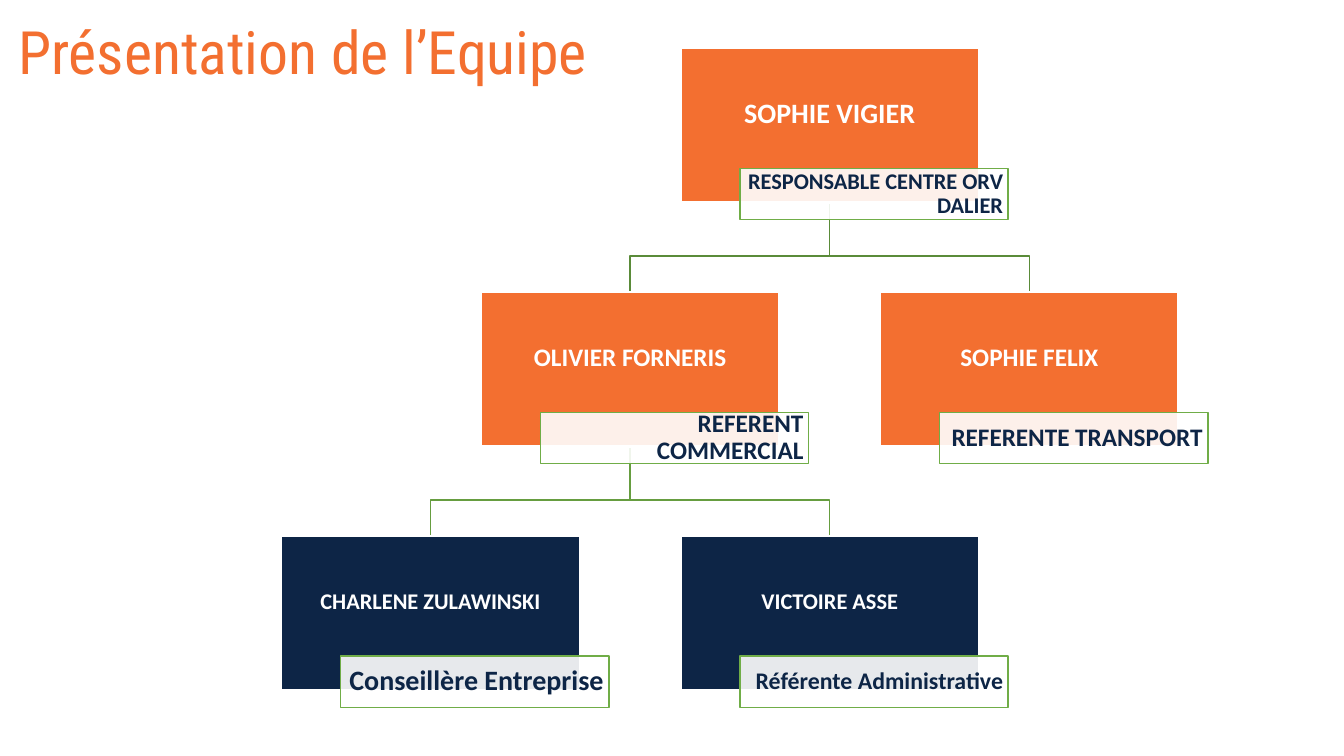
from dataclasses import dataclass

from lxml import etree
from pptx import Presentation
from pptx.dml.color import RGBColor
from pptx.enum.shapes import MSO_SHAPE
from pptx.enum.text import MSO_ANCHOR, MSO_AUTO_SIZE, PP_ALIGN
from pptx.oxml.ns import qn
from pptx.util import Inches, Pt

RECTANGLE = MSO_SHAPE.RECTANGLE
TOP, MIDDLE = MSO_ANCHOR.TOP, MSO_ANCHOR.MIDDLE
LEFT, CENTER, RIGHT = PP_ALIGN.LEFT, PP_ALIGN.CENTER, PP_ALIGN.RIGHT
NO_FIT = MSO_AUTO_SIZE.NONE


@dataclass(frozen=True)
class Theme:
    orange: str = "F36F30"
    navy: str = "0D2546"
    white: str = "FFFFFF"
    tag_line: str = "70AD47"
    upper_link: str = "5A8B39"
    lower_link: str = "669D40"
    title_font: str = "Roboto Condensed"
    body_font: str = "Calibri"
    title_size: float = 42.7
    large: int = 20
    medium: int = 18
    compact: int = 17
    small: int = 16


# Chart grid in inches: columns are half a sibling gap apart
FIRST_LEFT, COLUMN_STEP = 2.79, 1.98
FIRST_TOP, ROW_STEP = 0.48, 2.42
CARD_WIDTH, CARD_HEIGHT = 2.96, 1.53
TAG_X, TAG_Y, TAG_WIDTH, TAG_HEIGHT = 0.59, 1.19, 2.66, 0.51
BEND = 0.53


def card_corner(column, row):
    return FIRST_LEFT + column * COLUMN_STEP, FIRST_TOP + row * ROW_STEP


class OrgChartPage:
    def __init__(self, deck, theme):
        self.theme = theme
        self.page = deck.slides.add_slide(deck.slide_layouts[5])

    def set_text(self, box, text, font, size, color, align, anchor, insets, bold=True):
        frame = box.text_frame
        frame.word_wrap = True
        frame.auto_size = NO_FIT
        frame.vertical_anchor = anchor
        (frame.margin_left, frame.margin_top,
         frame.margin_right, frame.margin_bottom) = map(Inches, insets)
        para = frame.paragraphs[0]
        para.alignment = align
        para.line_spacing = 0.9 if bold else 1.0
        para.space_before = Pt(0)
        span = para.add_run()
        span.text = text
        span.font.name = font
        span.font.size = Pt(size)
        span.font.bold = bold
        span.font.color.rgb = RGBColor.from_string(color)

    def title(self, text):
        box = self.page.shapes.title
        box.left, box.top = Inches(0.08), Inches(0.1)
        box.width, box.height = Inches(6.59), Inches(1.77)
        self.set_text(box, text, self.theme.title_font, self.theme.title_size,
                      self.theme.orange, LEFT, TOP, (0.1, 0.05, 0.1, 0.05), bold=False)

    def rectangle(self, left, top, width, height, fill, line, weight):
        box = self.page.shapes.add_shape(
            RECTANGLE, Inches(left), Inches(top), Inches(width), Inches(height))
        box.shadow.inherit = False
        box.fill.solid()
        box.fill.fore_color.rgb = RGBColor.from_string(fill)
        box.line.color.rgb = RGBColor.from_string(line)
        box.line.width = Pt(weight)
        return box

    def link(self, parent, child, color):
        start_x, start_y = card_corner(*parent)
        end_x, end_y = card_corner(*child)
        start_x += CARD_WIDTH / 2
        end_x += CARD_WIDTH / 2
        start_y += CARD_HEIGHT
        bend_y = start_y + BEND
        builder = self.page.shapes.build_freeform(
            Inches(start_x), Inches(start_y), scale=1.0)
        corners = [(start_x, bend_y), (end_x, bend_y), (end_x, end_y)]
        builder.add_line_segments(
            [(Inches(x), Inches(y)) for x, y in corners], close=False)
        elbow = builder.convert_to_shape()
        elbow.shadow.inherit = False
        elbow.fill.background()
        elbow.line.color.rgb = RGBColor.from_string(color)
        elbow.line.width = Pt(1)

    def member(self, place, name, name_size, role, role_size, fill):
        theme = self.theme
        left, top = card_corner(*place)
        card = self.rectangle(left, top, CARD_WIDTH, CARD_HEIGHT, fill, theme.white, 1.5)
        self.set_text(card, name, theme.body_font, name_size, theme.white,
                      CENTER, MIDDLE, (0.01, 0.01, 0.01, 0.22))
        tag = self.rectangle(left + TAG_X, top + TAG_Y, TAG_WIDTH, TAG_HEIGHT,
                             theme.white, theme.tag_line, 1)
        # Tag fill lets the card show through
        tint = tag.element.spPr.find(qn("a:solidFill"))[0]
        etree.SubElement(tint, qn("a:alpha")).set("val", "90000")
        self.set_text(tag, role, theme.body_font, role_size, theme.navy,
                      RIGHT, MIDDLE, (0.05, 0.01, 0.05, 0.01))


def main():
    deck = Presentation()
    deck.slide_width, deck.slide_height = Inches(13.33), Inches(7.5)
    theme = Theme()
    chart = OrgChartPage(deck, theme)
    chart.title("Présentation de l’Equipe")

    # Places are (column, row)
    manager, sales, transport = (2, 0), (1, 1), (3, 1)
    adviser, office = (0, 2), (2, 2)

    # Links lie behind the cards
    for parent, child, color in [
        (manager, transport, theme.upper_link),
        (sales, office, theme.lower_link),
        (sales, adviser, theme.lower_link),
        (manager, sales, theme.upper_link),
    ]:
        chart.link(parent, child, color)

    # Team members
    for member in [
        (manager, "SOPHIE VIGIER", theme.large,
         "RESPONSABLE CENTRE ORV DALIER", theme.small, theme.orange),
        (sales, "OLIVIER FORNERIS", theme.medium,
         "REFERENT COMMERCIAL", theme.medium, theme.orange),
        (adviser, "CHARLENE ZULAWINSKI", theme.small,
         "Conseillère Entreprise", theme.large, theme.navy),
        (office, "VICTOIRE ASSE", theme.small,
         "Référente Administrative", theme.compact, theme.navy),
        (transport, "SOPHIE FELIX", theme.medium,
         "REFERENTE TRANSPORT", theme.medium, theme.orange),
    ]:
        chart.member(*member)

    deck.save("out.pptx")


if __name__ == "__main__":
    main()
